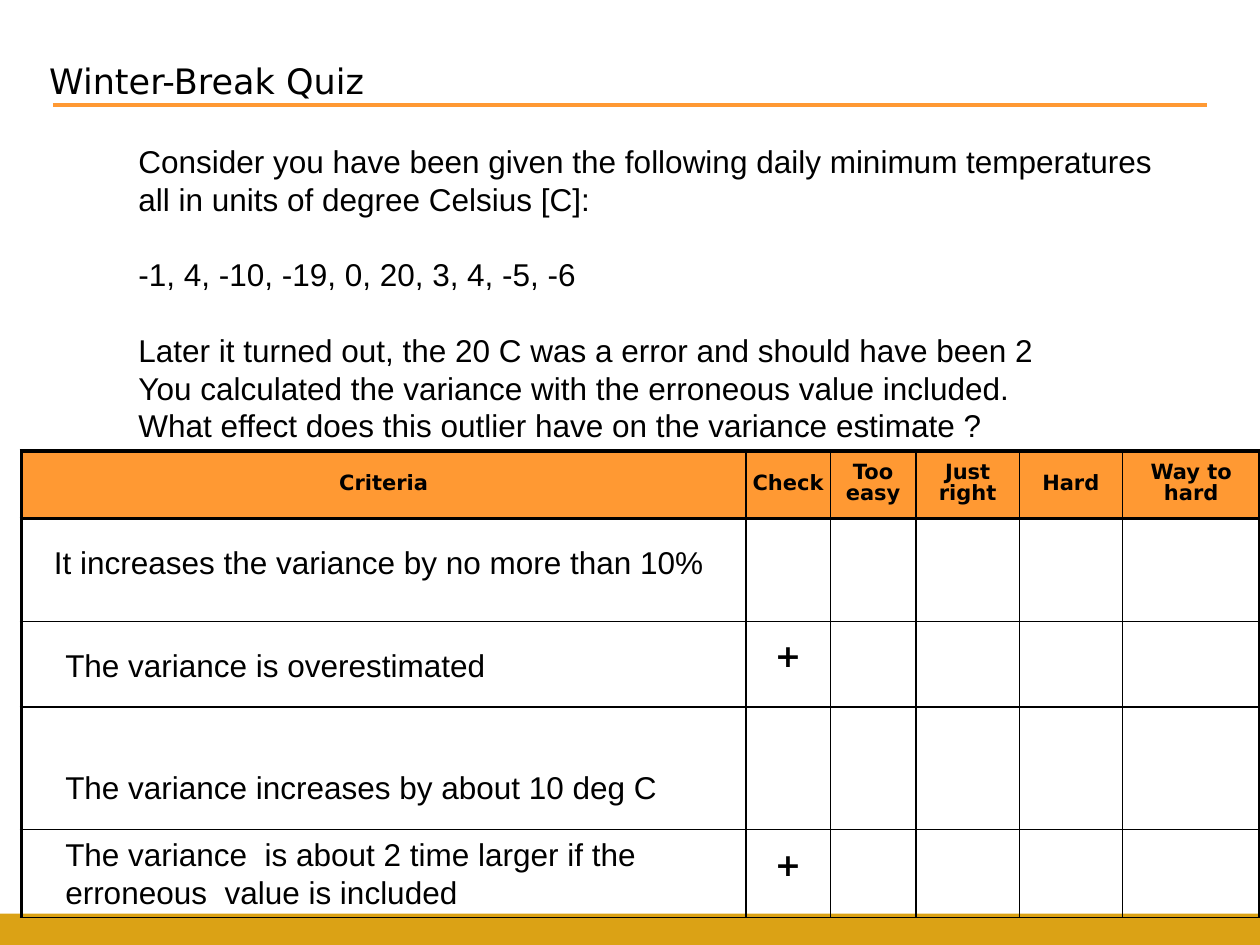
from lxml import etree
from pptx import Presentation
from pptx import util as u
from pptx.dml.color import RGBColor
from pptx.enum import shapes, text
from pptx.oxml import ns

W, H = 10, 7.5
BLACK, ORANGE, GOLD = "000000", "FF9933", "DBA215"
COLS = [5.75, 0.67, 0.68, 0.82, 0.82, 1.09]
ROWS = [0.53, 0.82, 0.68, 0.97, 0.7]
HEADERS = ["Criteria", "Check", "Too easy", "Just right", "Hard", "Way to hard"]
CHECKED = {2, 4}
QUESTION = [
    ["Consider you have been given the following daily minimum temperatures",
     "all in units of degree Celsius [C]:"],
    ["-1, 4, -10, -19, 0, 20, 3, 4, -5, -6"],
    ["Later it turned out, the 20 C was a error and should have been 2",
     "You calculated the variance with the erroneous value included.",
     "What effect does this outlier have on the variance estimate ?"],
]
ANSWERS = [
    (0.33, 4.26, 5.41, 0.4, ["It increases the variance by no more than 10%"]),
    (0.42, 5.08, 3.57, 0.4, ["The variance is overestimated"]),
    (0.42, 6.05, 4.94, 0.4, ["The variance increases by about 10 deg C"]),
    (0.42, 6.58, 4.84, 0.71, ["The variance  is about 2 time larger if the",
                              "erroneous  value is included"]),
]


def rgb(value):
    """Turn a hex string into a colour."""
    return RGBColor.from_string(value)


def box(*lengths):
    """Convert lengths in inches."""
    return [u.Inches(v) for v in lengths]


def add_run(p, words, size, font, bold=False):
    """Add one formatted run to a paragraph."""
    r = p.add_run()
    r.text = words
    r.font.size, r.font.name, r.font.bold = u.Pt(size), font, bold
    r.font.color.rgb = rgb(BLACK)


def add_title(s, words):
    """Place and format the slide title."""
    sp = s.shapes.title
    sp.left, sp.top, sp.width, sp.height = box(0.29, 0.42, 2.79, 0.44)
    tf = sp.text_frame
    tf.word_wrap = False
    tf.auto_size = text.MSO_AUTO_SIZE.NONE
    tf.vertical_anchor = text.MSO_ANCHOR.TOP
    tf.paragraphs[0].alignment = text.PP_ALIGN.LEFT
    add_run(tf.paragraphs[0], words, 20, "DejaVu Sans")


def add_bar(s, height):
    """Add the coloured band along the bottom edge."""
    sp = s.shapes.add_shape(shapes.MSO_SHAPE.RECTANGLE, *box(0, H - height, W, height))
    sp.shadow.inherit = False
    sp.fill.solid()
    sp.fill.fore_color.rgb = rgb(GOLD)
    sp.line.fill.background()


def add_rule(s, margin, y):
    """Add the line below the title."""
    line = s.shapes.add_connector(shapes.MSO_CONNECTOR.STRAIGHT,
                                  *box(margin, y, W - margin, y))
    line.line.color.rgb = rgb(ORANGE)
    line.line.width = u.Pt(2.25)
    etree.SubElement(line.element.spPr, ns.qn("a:effectLst"))


def add_text(s, x, y, w, h, groups):
    """Add groups of lines with one line of space between groups."""
    tf = s.shapes.add_textbox(*box(x, y, w, h)).text_frame
    tf.word_wrap = False
    p = None
    for i, group in enumerate(groups):
        for j, words in enumerate(group):
            p = tf.add_paragraph() if p is not None else tf.paragraphs[0]
            if i and not j:
                p.space_before = u.Pt(21.5)
            add_run(p, words, 18, "Arial")


def set_borders(cell, widths):
    """Draw the left, right, top and bottom borders of a cell."""
    tc_pr = cell._tc.get_or_add_tcPr()
    for side, width in zip("LRTB", widths):
        ln = etree.SubElement(tc_pr, ns.qn(f"a:ln{side}"), w=str(u.Pt(width)))
        fill = etree.SubElement(ln, ns.qn("a:solidFill"))
        etree.SubElement(fill, ns.qn("a:srgbClr"), val=BLACK)


def fill_cell(cell, words, size):
    """Write bold centred text into a cell."""
    cell.vertical_anchor = text.MSO_ANCHOR.MIDDLE
    cell.margin_left = cell.margin_right = u.Inches(0.05)
    cell.margin_top = cell.margin_bottom = u.Inches(0.1)
    p = cell.text_frame.paragraphs[0]
    p.alignment = text.PP_ALIGN.CENTER
    p.line_spacing = u.Pt(12)
    add_run(p, words, size, "DejaVu Sans", True)


def add_grid(s):
    """Add the table of criteria and difficulty ratings."""
    table = s.shapes.add_table(len(ROWS), len(COLS),
                               *box(0.17, 3.58, sum(COLS), sum(ROWS))).table
    table.first_row = table.horz_banding = False
    for col, width in zip(table.columns, COLS):
        col.width = u.Inches(width)
    for i, height in enumerate(ROWS):
        table.rows[i].height = u.Inches(height)
        for j in range(len(COLS)):
            cell = table.cell(i, j)
            heavy = (j == 0, j == len(COLS) - 1, i <= 1, i == 0)
            set_borders(cell, [2.25 if edge else 1 for edge in heavy])
            if i == 0:
                cell.fill.solid()
                cell.fill.fore_color.rgb = rgb(ORANGE)
                fill_cell(cell, HEADERS[j], 12)
            else:
                cell.fill.background()
                if j == 1 and i in CHECKED:
                    fill_cell(cell, "+", 18)


def main():
    """Build the quiz slide."""
    prs = Presentation()
    prs.slide_width, prs.slide_height = box(W, H)
    s = prs.slides.add_slide(prs.slide_layouts[5])
    add_bar(s, 0.25)
    add_title(s, "Winter-Break Quiz")
    add_rule(s, 0.42, 0.83)
    add_grid(s)
    add_text(s, 1, 1.08, 8.32, 2.52, QUESTION)
    for x, y, w, h, lines in ANSWERS:
        add_text(s, x, y, w, h, [lines])
    prs.save("out.pptx")


if __name__ == "__main__":
    main()
